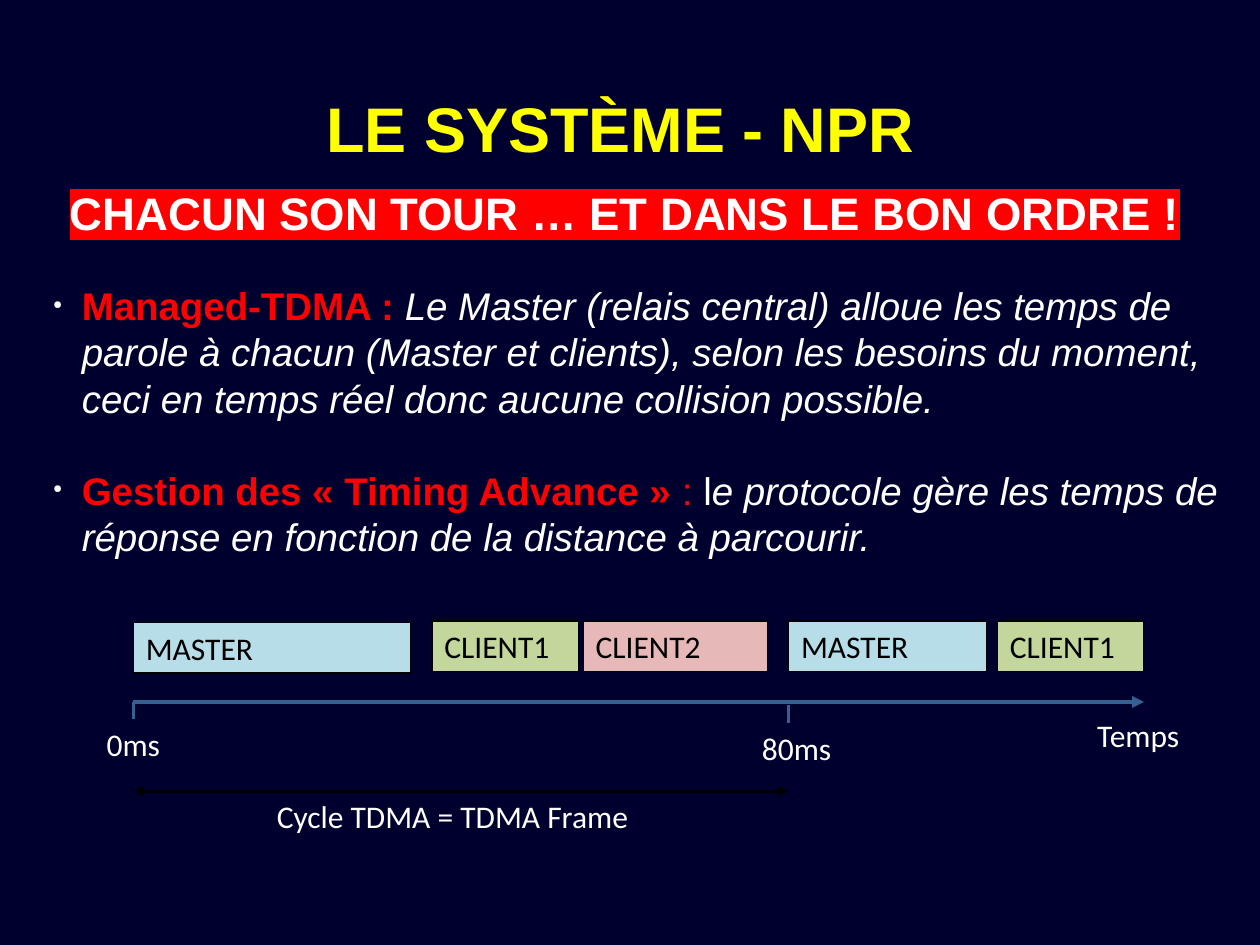
"""Build the NPR slide on managed TDMA and its frame timeline."""
from dataclasses import dataclass

from lxml import etree
from pptx import Presentation
from pptx import util as u
from pptx.dml.color import RGBColor
from pptx.enum import shapes, text
from pptx.oxml.ns import qn

WHITE, BLACK, RED, YELLOW = "FFFFFF", "000000", "FF0000", "FFFF00"
BLUE, GREEN, PINK, AXIS = "B7DEE8", "C3D69B", "E6B9B8", "376092"
START, FRAME_END, AXIS_END, AXIS_TOP = 2.69, 15.9, 23.06, 14.15
ROW_HEIGHT = 1.02


@dataclass
class Slot:
    name: str
    left: float
    width: float
    fill: str
    top: float = 12.52


@dataclass
class Label:
    words: str
    left: float
    top: float
    width: float
    wrap: bool = False


@dataclass
class Line:
    start: tuple[float, float]
    end: tuple[float, float]
    color: str = AXIS
    weight: float = 1.5
    arrows: tuple[str, ...] = ()


@dataclass
class Piece:
    words: str
    color: str = WHITE
    bold: bool = False
    italic: bool = False


SLOTS = [
    Slot("MASTER", START, 5.59, BLUE, 12.55),
    Slot("CLIENT1", 8.71, 2.95, GREEN),
    Slot("CLIENT2", 11.76, 3.71, PINK),
    Slot("MASTER", FRAME_END, 3.99, BLUE),
    Slot("CLIENT1", 20.11, 2.95, GREEN),
]
LABELS = [
    Label("Temps", 21.87, 14.3, 2.2),
    Label("0ms", 1.9, 14.5, 1.65),
    Label("80ms", 15.11, 14.58, 1.95),
    Label("Cycle TDMA = TDMA Frame", 5.33, 15.95, 7.95, True),
]
LINES = [
    Line((START, AXIS_TOP), (AXIS_END, AXIS_TOP), weight=2.25, arrows=("tailEnd",)),
    Line((START, AXIS_TOP), (START, 14.5)),
    Line((FRAME_END, 14.22), (FRAME_END, 14.58)),
    Line((START, 15.95), (FRAME_END, 15.95), BLACK, arrows=("headEnd", "tailEnd")),
]
BULLETS = [
    [
        Piece("Managed-TDMA : ", RED, bold=True),
        Piece("Le Master (relais central) alloue les temps de parole à chacun "
              "(Master et clients), selon les besoins du moment, ceci en temps "
              "réel donc aucune collision possible.", italic=True),
    ],
    [
        Piece("Gestion des « Timing Advance » ", RED, bold=True),
        Piece(":", RED),
        Piece(" l"),
        Piece("e protocole gère les temps de réponse en fonction de la distance "
              "à parcourir.", italic=True),
    ],
]


def rgb(color: str) -> RGBColor:
    return RGBColor.from_string(color)


def format_run(run, size: float, color: str, name: str = "Arial",
               bold: bool = False, italic: bool = False) -> None:
    font = run.font
    font.size, font.name, font.bold, font.italic = u.Pt(size), name, bold, italic
    font.color.rgb = rgb(color)


def place(shape, left: float, top: float, width: float, height: float) -> None:
    shape.left, shape.top = u.Cm(left), u.Cm(top)
    shape.width, shape.height = u.Cm(width), u.Cm(height)


def add_box(slide, left: float, top: float, width: float, height: float):
    shape = slide.shapes.add_textbox(u.Cm(left), u.Cm(top), u.Cm(width), u.Cm(height))
    shape.text_frame.word_wrap = True
    return shape.text_frame


def format_title(slide) -> None:
    title = slide.shapes.title
    place(title, 1.27, 1.8, 22.83, 15.77)
    frame = title.text_frame
    frame.margin_left = frame.margin_right = frame.margin_top = frame.margin_bottom = 0
    frame.vertical_anchor = text.MSO_ANCHOR.TOP
    frame.auto_size = text.MSO_AUTO_SIZE.NONE
    frame.text = "LE SYSTÈME - NPR "
    paragraph = frame.paragraphs[0]
    paragraph.alignment = text.PP_ALIGN.CENTER
    paragraph.line_spacing, paragraph.space_before = 1.0, u.Pt(0)
    format_run(paragraph.runs[0], 36, YELLOW, bold=True)


def add_subtitle(slide) -> None:
    frame = add_box(slide, 0.61, 3.61, 23.98, 3.71)
    frame.margin_top = u.Cm(0.12)
    frame.text = "CHACUN SON TOUR … ET DANS LE BON ORDRE !"
    paragraph = frame.paragraphs[0]
    paragraph.alignment = text.PP_ALIGN.CENTER
    run = paragraph.runs[0]
    format_run(run, 26, WHITE, bold=True)
    highlight = etree.Element(qn("a:highlight"))
    etree.SubElement(highlight, qn("a:srgbClr"), val=RED)
    run.font._element.find(qn("a:solidFill")).addnext(highlight)


def add_bullet(paragraph) -> None:
    properties = paragraph._p.get_or_add_pPr()
    properties.set("marL", str(u.Cm(0.61)))
    properties.set("indent", str(-u.Cm(0.58)))
    color = etree.SubElement(properties, qn("a:buClr"))
    etree.SubElement(color, qn("a:srgbClr"), val=WHITE)
    etree.SubElement(properties, qn("a:buSzPct"), val="30000")
    etree.SubElement(properties, qn("a:buChar"), char="●")


def add_body(slide) -> None:
    frame = add_box(slide, 0.79, 3.3, 24.38, 15.47)
    frame.margin_top = u.Cm(2.39)
    for index, pieces in enumerate(BULLETS):
        paragraph = frame.add_paragraph() if index else frame.paragraphs[0]
        paragraph.line_spacing = 1.0
        paragraph.space_before = u.Pt(26.5 * index)
        add_bullet(paragraph)
        for piece in pieces:
            run = paragraph.add_run()
            run.text = piece.words
            format_run(run, 22, piece.color, bold=piece.bold, italic=piece.italic)


def add_slot(slide, slot: Slot) -> None:
    shape = slide.shapes.add_shape(
        shapes.MSO_SHAPE.RECTANGLE, u.Cm(slot.left), u.Cm(slot.top),
        u.Cm(slot.width), u.Cm(ROW_HEIGHT))
    shape.shadow.inherit = False
    shape.fill.solid()
    shape.fill.fore_color.rgb = rgb(slot.fill)
    shape.line.color.rgb = rgb(BLACK)
    shape.line.width = u.Pt(0.75)
    frame = shape.text_frame
    frame.text = slot.name
    frame.vertical_anchor = text.MSO_ANCHOR.TOP
    frame.paragraphs[0].alignment = text.PP_ALIGN.LEFT
    format_run(frame.paragraphs[0].runs[0], 18, BLACK, "Calibri")


def add_label(slide, label: Label) -> None:
    frame = add_box(slide, label.left, label.top, label.width, ROW_HEIGHT)
    frame.word_wrap = label.wrap
    frame.auto_size = text.MSO_AUTO_SIZE.SHAPE_TO_FIT_TEXT
    frame.text = label.words
    format_run(frame.paragraphs[0].runs[0], 18, WHITE, "Calibri")


def add_line(slide, line: Line) -> None:
    connector = slide.shapes.add_connector(
        shapes.MSO_CONNECTOR.STRAIGHT, *map(u.Cm, line.start + line.end))
    connector.line.color.rgb = rgb(line.color)
    connector.line.width = u.Pt(line.weight)
    for arrow in line.arrows:
        etree.SubElement(connector.line._get_or_add_ln(), qn(f"a:{arrow}"), type="triangle")
    etree.SubElement(connector._element.spPr, qn("a:effectLst"))


def main() -> None:
    presentation = Presentation()
    presentation.slide_width, presentation.slide_height = u.Cm(25.4), u.Cm(19.05)
    slide = presentation.slides.add_slide(presentation.slide_layouts[5])
    slide.background.fill.solid()
    slide.background.fill.fore_color.rgb = rgb("00002E")
    format_title(slide)
    add_subtitle(slide)
    add_body(slide)
    for draw, items in ((add_slot, SLOTS), (add_line, LINES), (add_label, LABELS)):
        for item in items:
            draw(slide, item)
    presentation.save("out.pptx")


if __name__ == "__main__":
    main()
